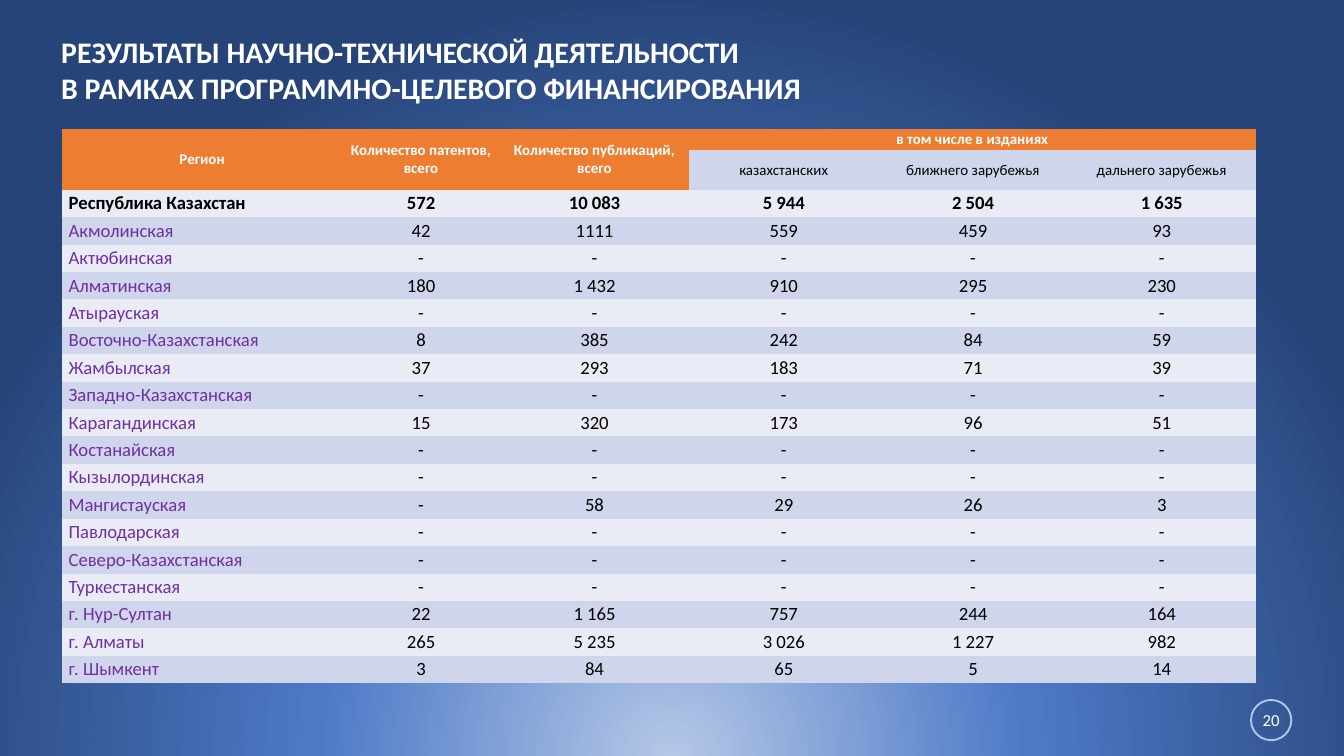
from lxml.etree import SubElement
from pptx import Presentation
from pptx.dml.color import RGBColor
from pptx.enum.shapes import MSO_SHAPE
from pptx.enum.text import MSO_ANCHOR, MSO_AUTO_SIZE, PP_ALIGN
from pptx.oxml.ns import qn
from pptx.util import Pt

COLORS = {
    "white": "FFFFFF",
    "black": "000000",
    "region": "7030A0",
    "header": "ED7D31",
    "band_dark": "CFD5EA",
    "band_light": "E9EBF5",
    "glow": "B4C7E7",
    "blue": "4D79C7",
    "navy": "264478",
}
NO_GRID_STYLE = "{2D5ABB26-0587-4C30-8999-92F81FD0307C}"

TITLE = (
    "РЕЗУЛЬТАТЫ НАУЧНО-ТЕХНИЧЕСКОЙ ДЕЯТЕЛЬНОСТИ\n"
    "В РАМКАХ ПРОГРАММНО-ЦЕЛЕВОГО ФИНАНСИРОВАНИЯ"
)
MAIN_HEADINGS = ("Регион", "Количество патентов, всего", "Количество публикаций, всего")
EDITIONS_HEADING = "в том числе в изданиях"
EDITIONS = ("казахстанских", "ближнего зарубежья", "дальнего зарубежья")
NO_DATA = ("-",) * 5
REGIONS = [
    ("Республика Казахстан", "572", "10 083", "5 944", "2 504", "1 635"),
    ("Акмолинская", "42", "1111", "559", "459", "93"),
    ("Актюбинская", *NO_DATA),
    ("Алматинская", "180", "1 432", "910", "295", "230"),
    ("Атырауская", *NO_DATA),
    ("Восточно-Казахстанская", "8", "385", "242", "84", "59"),
    ("Жамбылская", "37", "293", "183", "71", "39"),
    ("Западно-Казахстанская", *NO_DATA),
    ("Карагандинская", "15", "320", "173", "96", "51"),
    ("Костанайская", *NO_DATA),
    ("Кызылординская", *NO_DATA),
    ("Мангистауская", "-", "58", "29", "26", "3"),
    ("Павлодарская", *NO_DATA),
    ("Северо-Казахстанская", *NO_DATA),
    ("Туркестанская", *NO_DATA),
    ("г. Нур-Султан", "22", "1 165", "757", "244", "164"),
    ("г. Алматы", "265", "5 235", "3 026", "1 227", "982"),
    ("г. Шымкент", "3", "84", "65", "5", "14"),
]
COLUMN_WIDTHS = (150.2, 84.4, 101.4, 101.4, 101.4, 100.8)
ROW_HEIGHTS = (11.2, 21.4) + (14.7,) * len(REGIONS)


def rgb(color):
    return RGBColor.from_string(COLORS[color])


def write_text(frame, text, size=10, color="black", bold=False, align=PP_ALIGN.CENTER, font="Calibri"):
    frame.text = text
    for paragraph in frame.paragraphs:
        paragraph.alignment = align
        paragraph.font.name = font
        paragraph.font.size = Pt(size)
        paragraph.font.bold = bold
        paragraph.font.color.rgb = rgb(color)


def set_margins(box, horizontal, vertical):
    box.margin_left = box.margin_right = Pt(horizontal)
    box.margin_top = box.margin_bottom = Pt(vertical)


class ReportSlide:
    def __init__(self, slide):
        self.slide = slide

    def background(self, stops):
        self.slide.background.fill.gradient()
        gradient = self.slide.element.find(".//" + qn("a:gradFill"))
        for part in list(gradient):
            gradient.remove(part)
        stop_list = SubElement(gradient, qn("a:gsLst"))
        for percent, color in stops:
            stop = SubElement(stop_list, qn("a:gs"), pos=str(percent * 1000))
            SubElement(stop, qn("a:srgbClr"), val=COLORS[color])
        circle = SubElement(gradient, qn("a:path"), path="circle")
        SubElement(circle, qn("a:fillToRect"), l="50000", t="130000", r="50000", b="-30000")

    def title(self, text, left, top, width, height):
        frame = self.slide.shapes.add_textbox(Pt(left), Pt(top), Pt(width), Pt(height)).text_frame
        frame.word_wrap = False
        frame.auto_size = MSO_AUTO_SIZE.SHAPE_TO_FIT_TEXT
        frame.vertical_anchor = MSO_ANCHOR.MIDDLE
        set_margins(frame, 5.4, 2.7)
        write_text(frame, text, size=16, color="white", bold=True, align=PP_ALIGN.LEFT)

    def table(self, left, top, widths, heights):
        frame = self.slide.shapes.add_table(
            len(heights), len(widths), Pt(left), Pt(top), Pt(sum(widths)), Pt(sum(heights))
        )
        table = frame.table
        table.first_row = table.horz_banding = False
        frame.element.find(".//" + qn("a:tableStyleId")).text = NO_GRID_STYLE
        for column, width in zip(table.columns, widths):
            column.width = Pt(width)
        for row, height in zip(table.rows, heights):
            row.height = Pt(height)
        return table

    def cell(self, cell, text, fill, **style):
        cell.fill.solid()
        cell.fill.fore_color.rgb = rgb(fill)
        cell.vertical_anchor = MSO_ANCHOR.MIDDLE
        set_margins(cell, 3.6, 0)
        write_text(cell.text_frame, text, **style)

    def page_number(self, text, left, top, size):
        badge = self.slide.shapes.add_shape(MSO_SHAPE.OVAL, Pt(left), Pt(top), Pt(size), Pt(size))
        badge.shadow.inherit = False
        badge.fill.background()
        badge.line.color.rgb = rgb("glow")
        badge.line.width = Pt(1)
        frame = badge.text_frame
        frame.word_wrap = False
        frame.vertical_anchor = MSO_ANCHOR.MIDDLE
        set_margins(frame, 0, 3.6)
        write_text(frame, text, size=9, color="white")


def fill_headings(report, table):
    heading_style = dict(fill="header", size=8, color="white", bold=True)
    for column, heading in enumerate(MAIN_HEADINGS):
        table.cell(0, column).merge(table.cell(1, column))
        report.cell(table.cell(0, column), heading, **heading_style)
    first_edition = len(MAIN_HEADINGS)
    table.cell(0, first_edition).merge(table.cell(0, len(COLUMN_WIDTHS) - 1))
    report.cell(table.cell(0, first_edition), EDITIONS_HEADING, **heading_style)
    for column, edition in enumerate(EDITIONS, first_edition):
        report.cell(table.cell(1, column), edition, "band_dark", size=8)


def fill_regions(report, table):
    for index, region in enumerate(REGIONS):
        band = "band_dark" if index % 2 else "band_light"
        is_total = index == 0
        for column, value in enumerate(region):
            is_name = column == 0
            report.cell(
                table.cell(index + 2, column),
                value,
                band,
                bold=is_total,
                color="region" if is_name and not is_total else "black",
                align=PP_ALIGN.LEFT if is_name else PP_ALIGN.CENTER,
            )


def main():
    presentation = Presentation()
    presentation.slide_width = Pt(720)
    presentation.slide_height = Pt(405)
    report = ReportSlide(presentation.slides.add_slide(presentation.slide_layouts[6]))
    report.background([(0, "glow"), (46, "blue"), (100, "navy")])
    report.title(TITLE, 27.4, 15.2, 413.3, 44)
    table = report.table(33.2, 69.1, COLUMN_WIDTHS, ROW_HEIGHTS)
    fill_headings(report, table)
    fill_regions(report, table)
    report.page_number("20", 670.2, 375, 21.6)
    presentation.save("out.pptx")


if __name__ == "__main__":
    main()
